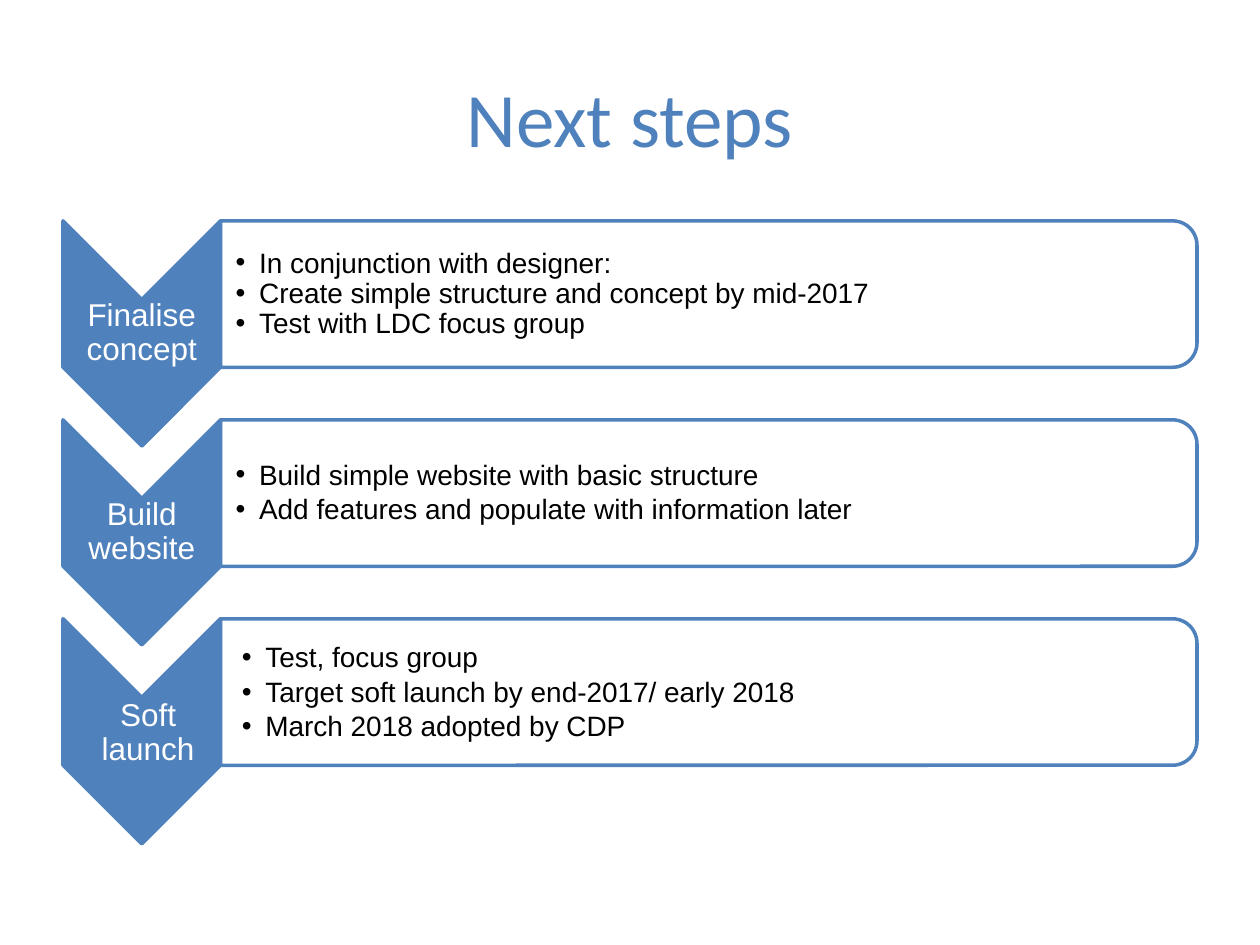
import pptx
import pptx.dml.color
import pptx.enum.shapes
import pptx.enum.text
import pptx.oxml
import pptx.oxml.ns
import pptx.util

Pt = pptx.util.Pt
SHAPES = pptx.enum.shapes.MSO_SHAPE
ALIGN = pptx.enum.text.PP_ALIGN
COLORS = {"blue": "4F81BD", "white": "FFFFFF", "black": "000000"}

TITLE = "Next steps"
# shift: right and down offset of the texts of a step; gap: space between bullets
STEPS = [
    {"label": "Finalise concept", "shift": (0, 0), "gap": 0,
     "bullets": ["In conjunction with designer:",
                 "Create simple structure and concept by mid-2017",
                 "Test with LDC focus group"]},
    {"label": "Build website", "shift": (0, 0), "gap": 2.4,
     "bullets": ["Build simple website with basic structure",
                 "Add features and populate with information later"]},
    {"label": "Soft launch", "shift": (3.6, 0.7), "gap": 2.4,
     "bullets": ["Test, focus group",
                 "Target soft launch by end-2017/ early 2018",
                 "March 2018 adopted by CDP"]},
]

LEFT, TOP, PITCH = 36, 126.2, 113.7
CHEVRON_WIDTH, CHEVRON_HEIGHT = 90, 128.7
BAR_WIDTH, BAR_HEIGHT = 558, 83.7
LABEL_TOP, LABEL_HEIGHT = 45.1, 38.9
LIST_TOP, LIST_WIDTH, LIST_HEIGHT = 4.1, 553.7, 75.6
INDENT = 13.5


def rgb(name):
    return pptx.dml.color.RGBColor.from_string(COLORS[name])


def add_bullet(paragraph):
    properties = paragraph._p.get_or_add_pPr()
    properties.set("marL", str(Pt(INDENT)))
    properties.set("indent", str(-Pt(INDENT)))
    namespace = pptx.oxml.ns.nsdecls("a")
    for xml in (
        f'<a:buClr {namespace}><a:srgbClr val="{COLORS["black"]}"/></a:buClr>',
        f'<a:buFont {namespace} typeface="Arial"/>',
        f'<a:buChar {namespace} char="•"/>',
    ):
        properties.append(pptx.oxml.parse_xml(xml))


def write_text(shape, lines, *, size, color, font="Arial", align=ALIGN.LEFT,
               margins=(0.7, 0.7, 0.7, 0.7), spacing=None, gap=0, bullets=False):
    """Fill a shape with one paragraph per line; margins run left, top, right, bottom."""
    frame = shape.text_frame
    frame.word_wrap = True
    frame.auto_size = pptx.enum.text.MSO_AUTO_SIZE.NONE
    frame.vertical_anchor = pptx.enum.text.MSO_ANCHOR.MIDDLE
    (frame.margin_left, frame.margin_top,
     frame.margin_right, frame.margin_bottom) = map(Pt, margins)
    for index, line in enumerate(lines):
        paragraph = frame.add_paragraph() if index else frame.paragraphs[0]
        if bullets:
            add_bullet(paragraph)
        paragraph.alignment = align
        paragraph.line_spacing = spacing
        paragraph.space_before = Pt(gap if index else 0)
        run = paragraph.add_run()
        run.text = line
        run.font.name = font
        run.font.size = Pt(size)
        run.font.color.rgb = rgb(color)


def add_turned_shape(slide, kind, left, top, width, height, adjustments, fill):
    """Add a shape turned by 90 degrees that covers the given box once turned."""
    shape = slide.shapes.add_shape(
        kind, Pt(left + (width - height) / 2), Pt(top + (height - width) / 2),
        Pt(height), Pt(width))
    shape.rotation = 90
    for index, value in enumerate(adjustments):
        shape.adjustments[index] = value
    shape.shadow.inherit = False
    shape.fill.solid()
    shape.fill.fore_color.rgb = rgb(fill)
    shape.line.color.rgb = rgb("blue")
    shape.line.width = Pt(2)
    return shape


def add_step(slide, step, top):
    right, down = step["shift"]
    bar_left = LEFT + CHEVRON_WIDTH
    add_turned_shape(slide, SHAPES.CHEVRON, LEFT, top, CHEVRON_WIDTH,
                     CHEVRON_HEIGHT, [0.5], "blue")
    bar = add_turned_shape(slide, SHAPES.ROUND_2_SAME_RECTANGLE, bar_left, top,
                           BAR_WIDTH, BAR_HEIGHT, [0.167, 0], "white")
    fill_color = bar._element.spPr.find(".//" + pptx.oxml.ns.qn("a:srgbClr"))
    fill_color.append(pptx.oxml.parse_xml(
        f'<a:alpha {pptx.oxml.ns.nsdecls("a")} val="90000"/>'))

    label = slide.shapes.add_textbox(
        Pt(LEFT + right), Pt(top + LABEL_TOP + down),
        Pt(CHEVRON_WIDTH), Pt(LABEL_HEIGHT))
    write_text(label, [step["label"]], size=18, color="white",
               align=ALIGN.CENTER, spacing=0.9)
    bullet_list = slide.shapes.add_textbox(
        Pt(bar_left + right), Pt(top + LIST_TOP + down),
        Pt(LIST_WIDTH), Pt(LIST_HEIGHT))
    write_text(bullet_list, step["bullets"], size=16, color="black",
               margins=(8.6, 0.7, 0.7, 0.7), spacing=0.9,
               gap=step["gap"], bullets=True)


def main():
    presentation = pptx.Presentation()
    presentation.slide_width, presentation.slide_height = Pt(720), Pt(540)
    slide = presentation.slides.add_slide(
        presentation.slide_layouts.get_by_name("Title Only"))
    title = slide.shapes.title
    title.left, title.top, title.width, title.height = map(Pt, (36, 21.6, 648, 90))
    write_text(title, [TITLE], size=44, color="blue", font="Calibri",
               align=ALIGN.CENTER, margins=(7.2, 3.6, 7.2, 3.6))
    for index, step in enumerate(STEPS):
        add_step(slide, step, TOP + index * PITCH)
    presentation.save("out.pptx")


if __name__ == "__main__":
    main()
